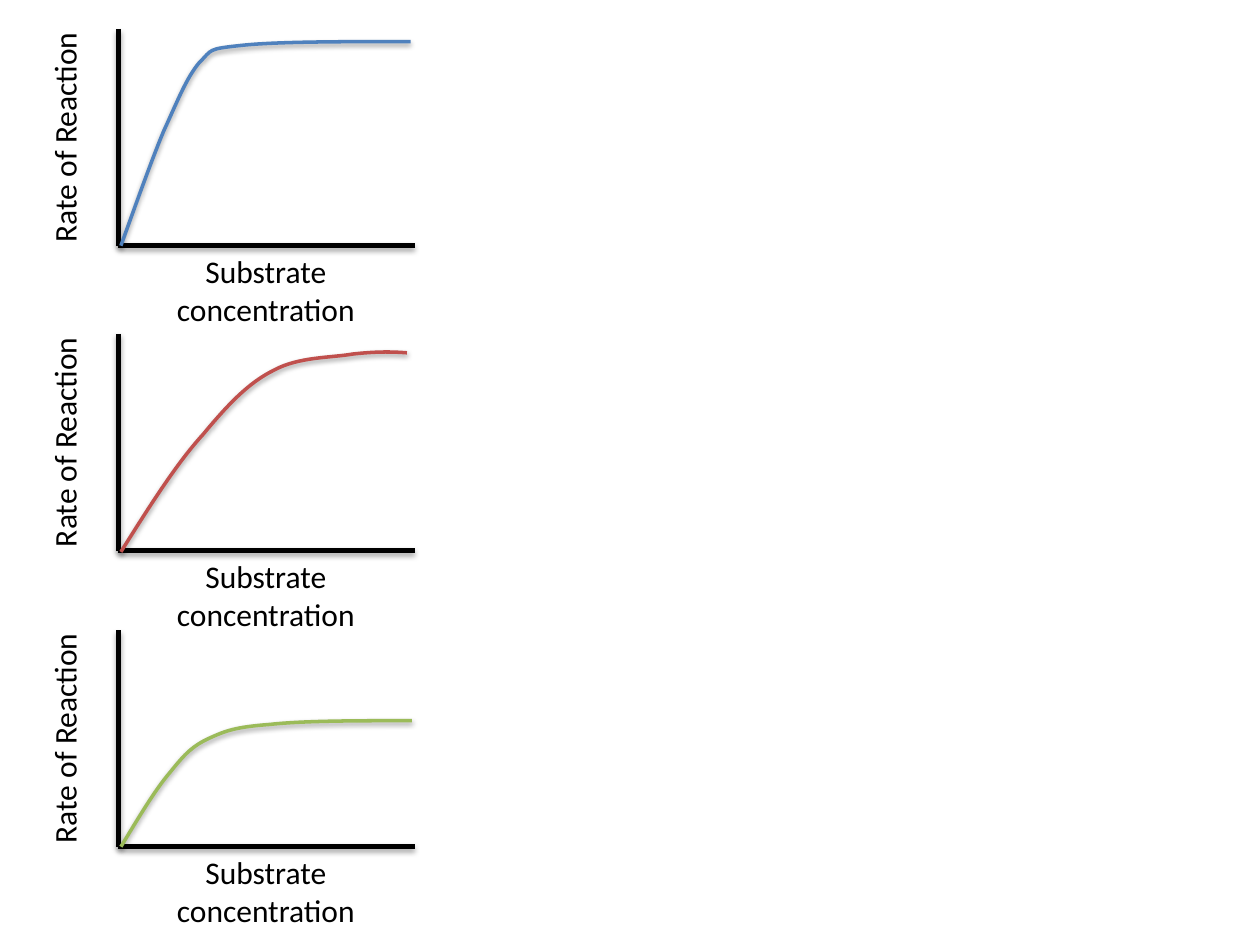
"""Build a slide of three enzyme rate curves against substrate concentration."""
from dataclasses import dataclass

from lxml.etree import SubElement
from pptx import Presentation
from pptx.dml.color import RGBColor
from pptx.enum.shapes import MSO_CONNECTOR
from pptx.enum.text import MSO_AUTO_SIZE, PP_ALIGN
from pptx.oxml.ns import qn
from pptx.util import Inches, Pt


@dataclass(frozen=True)
class Theme:
    font: str = "Calibri"
    size: Pt = Pt(18)
    ink: RGBColor = RGBColor(0, 0, 0)
    blue: RGBColor = RGBColor(0x4F, 0x81, 0xBD)
    red: RGBColor = RGBColor(0xC0, 0x50, 0x4D)
    green: RGBColor = RGBColor(0x9B, 0xBB, 0x59)
    axis_width: Pt = Pt(3)
    curve_width: Pt = Pt(2)


def style_line(sp, color, width, opacity, distance):
    sp.line.color.rgb = color
    sp.line.width = width
    effects = SubElement(sp.element.spPr, qn("a:effectLst"))
    shadow = SubElement(effects, qn("a:outerShdw"), blurRad=str(Pt(3.1)),
                        dist=str(Pt(distance)), dir="5400000", rotWithShape="0")
    black = SubElement(shadow, qn("a:srgbClr"), val=str(theme.ink))
    SubElement(black, qn("a:alpha"), val=str(opacity * 1000))


def add_label(s, text, left, top, height, rotation=0):
    sp = s.shapes.add_textbox(Inches(left), Inches(top), Inches(2.34), Inches(height))
    sp.rotation = rotation
    tf = sp.text_frame
    tf.word_wrap = True
    tf.auto_size = MSO_AUTO_SIZE.SHAPE_TO_FIT_TEXT
    p = tf.paragraphs[0]
    p.text = text
    p.alignment = PP_ALIGN.CENTER
    p.font.name = theme.font
    p.font.size = theme.size
    p.font.color.rgb = theme.ink


theme = Theme()
prs = Presentation()
prs.slide_width, prs.slide_height = Inches(10), Inches(7.5)
s = prs.slides.add_slide(prs.slide_layouts[6])

AXIS_X, AXIS_LENGTH, AXIS_HEIGHT = 0.94, 2.35, 1.72

graphs = [
    (0.23, theme.blue, [
        (0.96, 1.95), (1.08, 1.62), (1.2, 1.28), (1.3, 1.04),
        (1.41, 0.8), (1.48, 0.62), (1.58, 0.5),
        (1.69, 0.39), (1.64, 0.39), (1.92, 0.36),
        (2.2, 0.33), (2.73, 0.33), (3.26, 0.33)]),
    (2.65, theme.red, [
        (0.96, 4.38), (1.18, 4.03), (1.4, 3.68), (1.61, 3.45),
        (1.81, 3.21), (1.97, 3.04), (2.17, 2.94),
        (2.37, 2.83), (2.63, 2.84), (2.8, 2.81),
        (2.98, 2.79), (3.1, 2.79), (3.23, 2.8)]),
    (5, theme.green, [
        (0.96, 6.72), (1.1, 6.49), (1.23, 6.27), (1.35, 6.13),
        (1.47, 5.98), (1.53, 5.92), (1.66, 5.86),
        (1.79, 5.8), (1.87, 5.77), (2.14, 5.75),
        (2.41, 5.72), (2.84, 5.72), (3.27, 5.72)]),
]

for top, color, controls in graphs:
    base = top + AXIS_HEIGHT
    for x1, y1, x2, y2 in [(AXIS_X, top, AXIS_X, base),
                           (AXIS_X, base, AXIS_X + AXIS_LENGTH, base)]:
        axis = s.shapes.add_connector(MSO_CONNECTOR.STRAIGHT, Inches(x1), Inches(y1),
                                      Inches(x2), Inches(y2))
        style_line(axis, theme.ink, theme.axis_width, 35, 1.8)

    start, *rest = [(Inches(x), Inches(y)) for x, y in controls]
    builder = s.shapes.build_freeform(*start)
    builder.add_line_segments(rest, close=False)
    curve = builder.convert_to_shape()
    outline = next(curve.element.iter(qn("a:path")))
    segments = outline.findall(qn("a:lnTo"))
    for i in range(0, len(segments), 3):
        bezier = SubElement(outline, qn("a:cubicBezTo"))
        for segment in segments[i:i + 3]:
            bezier.append(segment[0])
            outline.remove(segment)
    curve.fill.background()
    style_line(curve, color, theme.curve_width, 38, 1.6)

    add_label(s, "Substrate concentration", AXIS_X, base, 0.71)
    add_label(s, "Rate of Reaction", -0.66, top + 0.66, 0.4, rotation=270)

prs.save("out.pptx")
